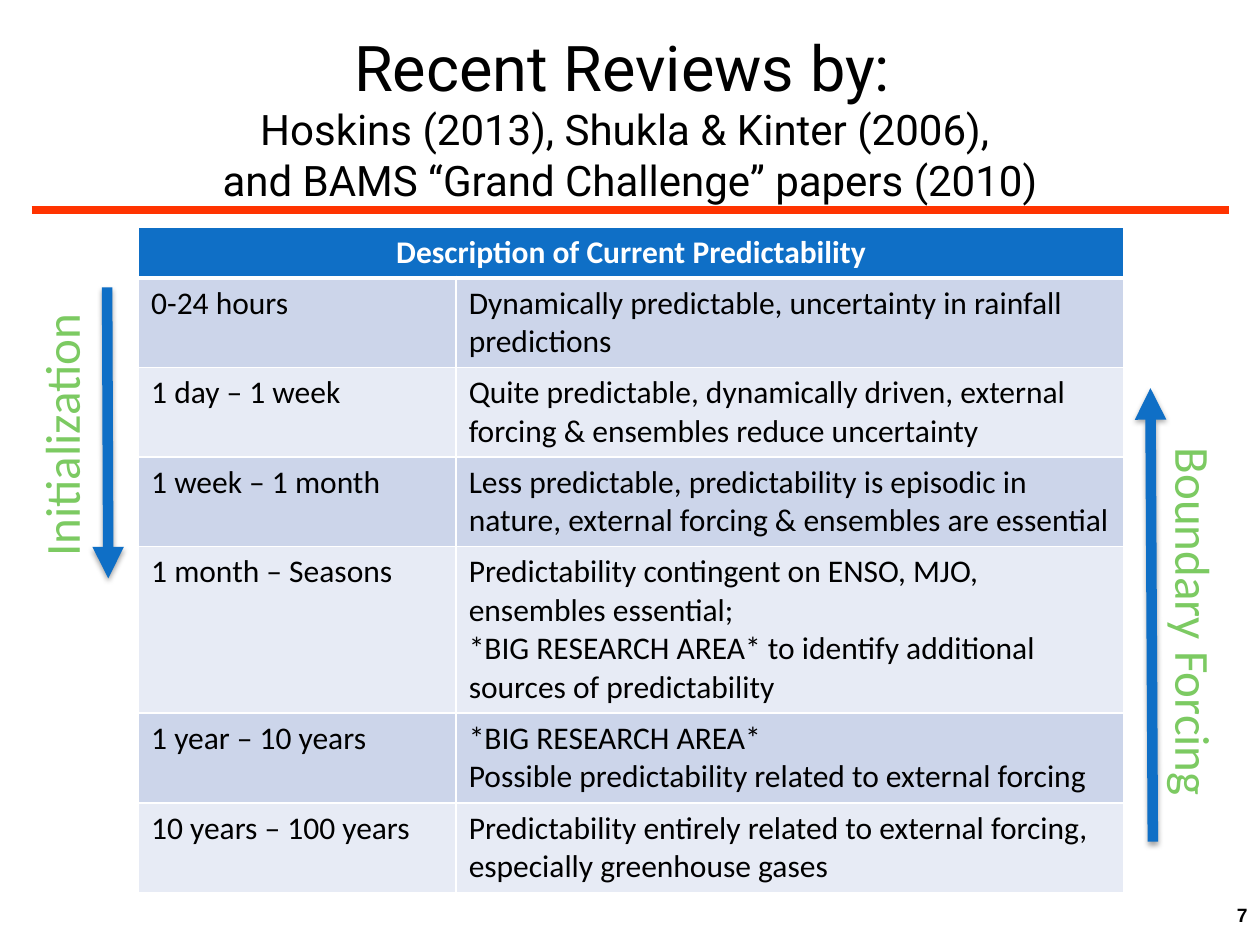
"""Builds the slide on reviews of current predictability."""
import dataclasses

import pptx
import pptx.dml.color
import pptx.enum.shapes
import pptx.enum.text
import pptx.oxml
import pptx.oxml.ns
import pptx.util
from lxml import etree

Pt = pptx.util.Pt
Align = pptx.enum.text.PP_ALIGN
Anchor = pptx.enum.text.MSO_ANCHOR


@dataclasses.dataclass(frozen=True)
class Theme:
    """Colours, fonts and type sizes of the deck."""
    ink: str = "000000"
    paper: str = "FFFFFF"
    blue: str = "0F6FC6"
    green: str = "7CCA62"
    rule: str = "FF3300"
    bands: tuple = ("CCD5EA", "E7EBF5")
    title_font: str = "Roboto"
    body_font: str = "Calibri"
    number_font: str = "Arial"
    title_size: float = 36
    subtitle_size: float = 24
    table_size: float = 18
    label_size: float = 28
    number_size: float = 11


THEME = Theme()
LINE_HEIGHT = 22
CELL_PADDING = 7.2
HEADING = "Description of Current Predictability"
RANGES = [
    ("0-24 hours", ["Dynamically predictable, uncertainty in rainfall predictions"], 2),
    ("1 day – 1 week", ["Quite predictable, dynamically driven, external forcing "
                        "& ensembles reduce uncertainty"], 2),
    ("1 week – 1 month", ["Less predictable, predictability is episodic in nature, "
                          "external forcing & ensembles are essential"], 2),
    ("1 month – Seasons", ["Predictability contingent on ENSO, MJO, ensembles essential;",
                           "*BIG RESEARCH AREA* to identify additional sources of "
                           "predictability"], 4),
    ("1 year – 10 years", ["*BIG RESEARCH AREA*",
                           "Possible predictability related to external forcing"], 2),
    ("10 years – 100 years", ["Predictability entirely related to external forcing, "
                              "especially greenhouse gases"], 2),
]


def rgb(color):
    """Return the colour object of a hex string."""
    return pptx.dml.color.RGBColor.from_string(color)


def add_span(para, text, font, size, color, bold=False):
    """Add one formatted run to a paragraph."""
    span = para.add_run()
    span.text = text
    span.font.name = font
    span.font.size = Pt(size)
    span.font.bold = bold
    span.font.color.rgb = rgb(color)


def add_line(shapes, start, end, color, width):
    """Draw a straight connector without a shadow."""
    line = shapes.add_connector(pptx.enum.shapes.MSO_CONNECTOR.STRAIGHT,
                                *map(Pt, start + end))
    line.line.color.rgb = rgb(color)
    line.line.width = Pt(width)
    etree.SubElement(line._element.spPr, pptx.oxml.ns.qn("a:effectLst"))
    return line


def add_arrow(shapes, start, end):
    """Draw a thick arrow with a soft shadow below it."""
    arrow = add_line(shapes, start, end, THEME.blue, 6)
    namespace = pptx.oxml.ns.nsdecls("a")
    arrow.line._get_or_add_ln().append(
        pptx.oxml.parse_xml(f'<a:tailEnd {namespace} type="triangle"/>'))
    arrow._element.spPr.find(pptx.oxml.ns.qn("a:effectLst")).append(pptx.oxml.parse_xml(
        f'<a:outerShdw {namespace} blurRad="{Pt(3.1)}" dist="{Pt(1.8)}" dir="5400000" '
        'rotWithShape="0"><a:srgbClr val="000000"><a:alpha val="35000"/></a:srgbClr>'
        '</a:outerShdw>'))


def add_heading(page, box):
    """Fill the title placeholder and draw the rule under it."""
    add_line(page.shapes, (18, 120.2), (702, 120.2), THEME.rule, 4.5)
    title = page.shapes.title
    title.left, title.top, title.width, title.height = map(Pt, box)
    title.text_frame.vertical_anchor = Anchor.MIDDLE
    title.text_frame.auto_size = pptx.enum.text.MSO_AUTO_SIZE.NONE
    para = title.text_frame.paragraphs[0]
    para.alignment = Align.CENTER
    add_span(para, "Recent Reviews by: ", THEME.title_font, THEME.title_size, THEME.ink)
    for text in ("Hoskins (2013), Shukla & Kinter (2006), ",
                 "and BAMS “Grand Challenge” papers (2010)"):
        para.add_line_break()
        add_span(para, text, THEME.title_font, THEME.subtitle_size, THEME.ink)


def style_cell(cell, fill, top=1, bottom=1):
    """Give a cell its borders and its fill."""
    properties = cell._tc.get_or_add_tcPr()
    for side, width in zip("LRTB", (1, 1, top, bottom)):
        properties.append(pptx.oxml.parse_xml(
            f'<a:ln{side} {pptx.oxml.ns.nsdecls("a")} w="{Pt(width)}"><a:solidFill>'
            f'<a:srgbClr val="{THEME.paper}"/></a:solidFill></a:ln{side}>'))
    cell.fill.solid()
    cell.fill.fore_color.rgb = rgb(fill)


def fill_cell(cell, lines, color=THEME.ink, bold=False, align=Align.LEFT):
    """Write one paragraph for each line of a cell."""
    for index, text in enumerate(lines):
        frame = cell.text_frame
        para = frame.add_paragraph() if index else frame.paragraphs[0]
        para.alignment = align
        add_span(para, text, THEME.body_font, THEME.table_size, color, bold)


def add_ranges(page, box):
    """Build the table of time ranges and their predictability."""
    table = page.shapes.add_table(len(RANGES) + 1, 2, *map(Pt, box)).table
    for column, width in zip(table.columns, (181.5, box[2] - 181.5)):
        column.width = Pt(width)
    for row, lines in zip(table.rows, [1] + [entry[2] for entry in RANGES]):
        row.height = Pt(lines * LINE_HEIGHT + CELL_PADDING)
    table.cell(0, 0).merge(table.cell(0, 1))
    for column in range(2):
        style_cell(table.cell(0, column), THEME.blue, bottom=3)
    fill_cell(table.cell(0, 0), [HEADING], THEME.paper, True, Align.CENTER)
    for index, (period, description, _) in enumerate(RANGES):
        for column, lines in enumerate(([period], description)):
            cell = table.cell(index + 1, column)
            style_cell(cell, THEME.bands[index % 2], top=1 if index else 3)
            fill_cell(cell, lines)


def add_influence(page, box, text, rotation, start, end):
    """Group an arrow with its turned label."""
    group = page.shapes.add_group_shape()
    add_arrow(group.shapes, start, end)
    label = group.shapes.add_textbox(*map(Pt, box))
    label.rotation = rotation
    label.text_frame.word_wrap = False
    label.text_frame.auto_size = pptx.enum.text.MSO_AUTO_SIZE.SHAPE_TO_FIT_TEXT
    add_span(label.text_frame.paragraphs[0], text, THEME.body_font,
             THEME.label_size, THEME.green)


def add_page_number(page, box):
    """Write the page number in the corner."""
    label = page.shapes.add_textbox(*map(Pt, box))
    label.text_frame.word_wrap = True
    para = label.text_frame.paragraphs[0]
    para.alignment = Align.RIGHT
    add_span(para, "7", THEME.number_font, THEME.number_size, THEME.ink, True)


def main():
    """Build and save the deck."""
    deck = pptx.Presentation()
    deck.slide_width, deck.slide_height = Pt(720), Pt(540)
    page = deck.slides.add_slide(deck.slide_layouts[5])
    add_heading(page, (113.8, 21.6, 492.4, 90))
    add_page_number(page, (570.2, 512.6, 149.8, 36))
    add_ranges(page, (79.2, 129.6, 563, 380))
    add_influence(page, (-44.6, 225.4, 158.4, 41), "Initialization", 270,
                  (61.2, 164.2), (61.9, 330.5))
    add_influence(page, (571.7, 339.1, 221.8, 41), "Boundary Forcing", 90,
                  (658.8, 481), (657.4, 221.8))
    deck.save("out.pptx")


if __name__ == "__main__":
    main()
